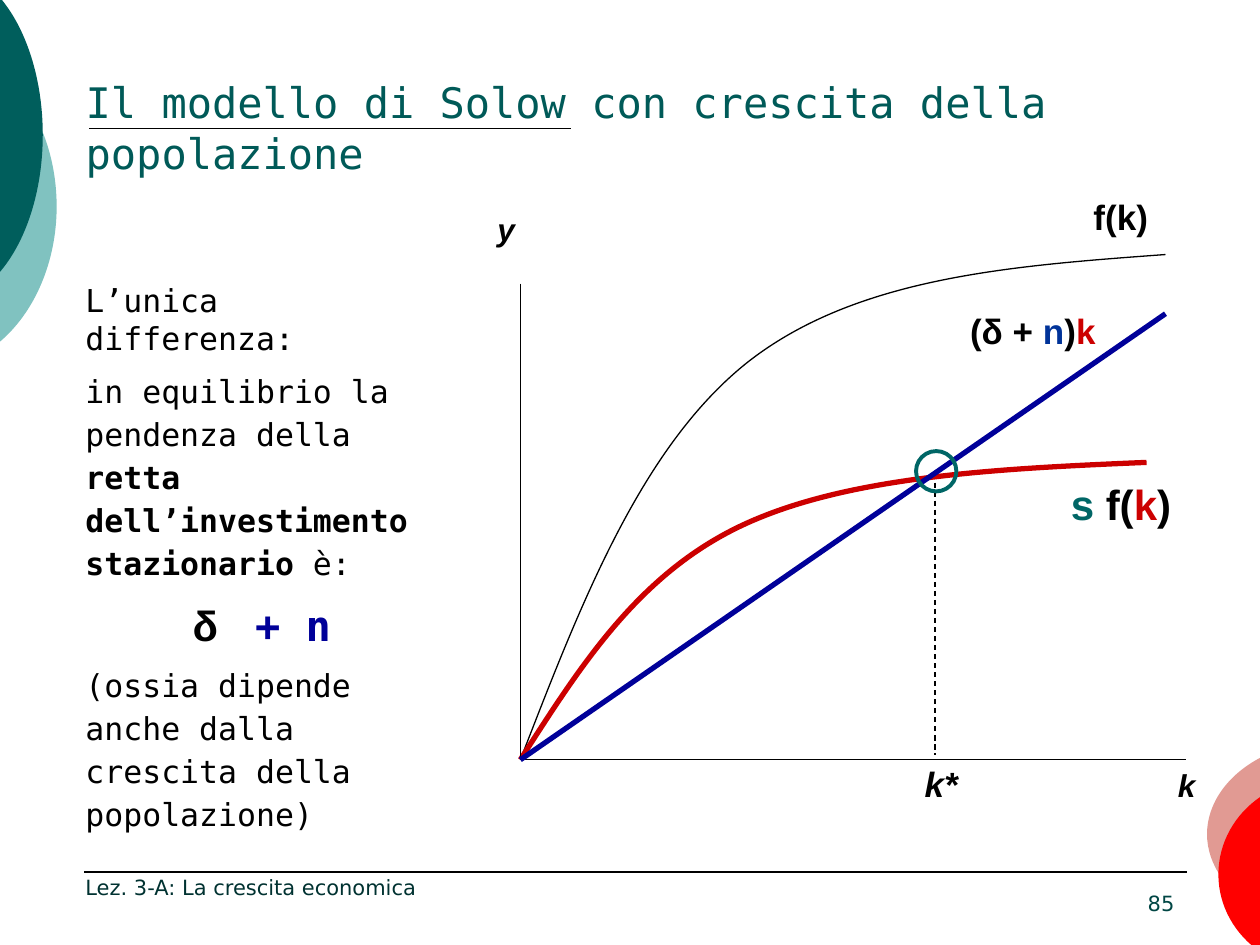
from dataclasses import dataclass

from lxml import etree
from pptx import Presentation
from pptx.dml.color import RGBColor
from pptx.enum.dml import MSO_LINE
from pptx.enum.shapes import MSO_CONNECTOR, MSO_SHAPE
from pptx.enum.text import MSO_ANCHOR, MSO_AUTO_SIZE, PP_ALIGN
from pptx.oxml.ns import qn
from pptx.util import Inches, Pt

STRAIGHT = MSO_CONNECTOR.STRAIGHT
RING = MSO_SHAPE.FLOWCHART_CONNECTOR
DASH = MSO_LINE.DASH
FIXED, GROW = MSO_AUTO_SIZE.NONE, MSO_AUTO_SIZE.SHAPE_TO_FIT_TEXT
TOP, BOTTOM = MSO_ANCHOR.TOP, MSO_ANCHOR.BOTTOM
LEFT, CENTER, RIGHT = PP_ALIGN.LEFT, PP_ALIGN.CENTER, PP_ALIGN.RIGHT


@dataclass(frozen=True)
class Theme:
    sans: str = "DejaVu Sans"
    mono: str = "DejaVu Sans Mono"
    math: str = "Arial"
    black: str = "000000"
    title: str = "005A58"
    foot: str = "003231"
    page: str = "004644"
    dark: str = "005E5C"
    light: str = "80C2C0"
    pink: str = "E19A93"
    bright: str = "FF0000"
    teal: str = "006666"
    red: str = "CC0000"
    navy: str = "000099"
    blue: str = "003399"
    small: int = 12
    body: int = 18
    label: int = 20
    large: int = 24
    thin: float = 0.75
    thick: float = 3


T = Theme()


def set_text(frame, paras, anchor=TOP, fit=FIXED):
    """Each para is (align, line spacing, space before, font, size, runs); a run is (text, colour, bold, italic)."""
    frame.word_wrap = True
    frame.auto_size = fit
    frame.vertical_anchor = anchor
    for i, (align, lead, gap, face, size, runs) in enumerate(paras):
        para = frame.paragraphs[0] if i == 0 else frame.add_paragraph()
        para.alignment, para.line_spacing, para.space_before = align, lead, Pt(gap)
        para.font.name, para.font.size = face, Pt(size)
        for text, color, bold, slant in runs:
            run = para.add_run()
            run.text = text
            run.font.color.rgb = RGBColor.from_string(color)
            run.font.bold, run.font.italic = bold, slant


def trace(points, closed):
    """Draw cubic curves: a start point, then three points for each piece."""
    dots = [(Inches(x), Inches(y)) for x, y in points]
    pen = shapes.build_freeform(*dots[0])
    pen.add_line_segments(dots[1:], close=closed)
    shape = pen.convert_to_shape()
    shape.shadow.inherit = False
    route = shape._element.spPr.find(".//" + qn("a:path"))
    steps = route.findall(qn("a:lnTo"))
    for n in range(0, len(steps), 3):
        bend = etree.Element(qn("a:cubicBezTo"))
        steps[n].addprevious(bend)
        for step in steps[n:n + 3]:
            bend.append(step[0])
            route.remove(step)
    return shape, route


prs = Presentation()
prs.slide_width, prs.slide_height = Inches(10), Inches(7.5)
slide = prs.slides.add_slide(prs.slide_layouts[5])
shapes = slide.shapes

# Title
title = shapes.title
title.left, title.top, title.width, title.height = map(Inches, (0.58, 0.56, 9, 1.02))
set_text(title.text_frame, [(LEFT, 1, 0, T.mono, T.large, [
    ("Il modello di Solow con crescita della popolazione", T.title, False, False)])])

# Edge discs, cut at the slide edge inside the frame of the full disc
discs = [
    ((-1.69, 0.31, 2.15, 2.65), T.light,
     [(-0.01, 0.55), (0.28, 0.8), (0.45, 1.2), (0.45, 1.64), (0.45, 2.07), (0.28, 2.48), (-0.01, 2.72)]),
    ((-1.27, -0.27, 1.61, 2.67), T.dark,
     [(-0.01, -0.03), (0.21, 0.22), (0.34, 0.63), (0.34, 1.07), (0.34, 1.51), (0.21, 1.92), (-0.01, 2.17)]),
    ((9.58, 5.88, 2.04, 1.48), T.pink,
     [(10.01, 7.23), (9.74, 7.09), (9.58, 6.86), (9.58, 6.62), (9.58, 6.38), (9.74, 6.15), (10.01, 6.01)]),
    ((9.67, 6.19, 1.53, 1.5), T.bright,
     [(10.01, 7.56), (9.8, 7.42), (9.67, 7.19), (9.67, 6.94), (9.67, 6.69), (9.8, 6.46), (10.01, 6.32)]),
]
for frame, color, points in discs:
    disc, route = trace(points, True)
    disc.fill.solid()
    disc.fill.fore_color.rgb = RGBColor.from_string(color)
    disc.line.fill.background()
    x, y, w, h = map(Inches, frame)
    for dot in route.iter(qn("a:pt")):
        dot.set("x", str(int(dot.get("x")) + disc.left - x))
        dot.set("y", str(int(dot.get("y")) + disc.top - y))
    route.set("w", str(w))
    route.set("h", str(h))
    disc.left, disc.top, disc.width, disc.height = x, y, w, h

# Output and saving curves
x0, y0 = 4.13, 6.03
curves = [
    (T.black, T.thin, [(x0, y0), (4.61, 4.79), (5.09, 3.54), (5.94, 2.87),
                       (6.8, 2.2), (8.02, 2.11), (9.25, 2.02)]),
    (T.red, T.thick, [(x0, y0), (4.6, 5.3), (5.06, 4.56), (5.89, 4.17),
                      (6.72, 3.78), (7.91, 3.72), (9.1, 3.67)]),
]
for color, width, points in curves:
    curve, route = trace(points, False)
    curve.fill.background()
    curve.line.color.rgb = RGBColor.from_string(color)
    curve.line.width = Pt(width)

# Rules, axes, drop line and investment line
lines = [
    (0.71, 1.02, 4.53, 1.02, T.black, 1, None),
    (0.67, 6.92, 9.42, 6.92, T.black, T.thin, None),
    (x0, 2.25, x0, y0, T.black, T.thin, None),
    (x0, y0, 9.41, y0, T.black, T.thin, None),
    (7.42, 3.83, 7.42, 5.99, T.black, T.thin, DASH),
    (x0, y0, 9.25, 2.49, T.navy, T.thick, None),
]
for ax, ay, bx, by, color, width, dash in lines:
    rule = shapes.add_connector(STRAIGHT, *map(Inches, (ax, ay, bx, by)))
    rule.line.color.rgb = RGBColor.from_string(color)
    rule.line.width = Pt(width)
    if dash:
        rule.line.dash_style = dash
    etree.SubElement(rule._element.spPr, qn("a:effectLst"))

# Equilibrium ring
ring = shapes.add_shape(RING, *map(Inches, (7.27, 3.58, 0.32, 0.32)))
ring.shadow.inherit = False
ring.fill.background()
ring.line.color.rgb = RGBColor.from_string(T.teal)
ring.line.width = Pt(2.25)

# Chart labels, the first one indented
labels = [
    (3.5, 1.62, 2.13, 0.4, 0.35, T.body, [("y", T.black, True, True)]),
    (9.25, y0, 0.63, 0.4, 0, T.body, [("k", T.black, True, True)]),
    (7.24, 6, 0.46, 0.43, 0, T.label, [("k*", T.black, True, True)]),
    (8.58, 1.5, 0.79, 0.44, 0, T.label, [("f(k)", T.black, True, False)]),
    (7.6, 2.41, 1.42, 0.43, 0, T.label, [
        ("(δ + ", T.black, True, False), ("n", T.blue, True, False),
        (")", T.black, True, False), ("k", T.red, True, False)]),
    (8.4, 3.75, 1.17, 0.5, 0, T.large, [
        ("s ", T.teal, True, False), ("f(", T.black, True, False),
        ("k", T.red, True, False), (")", T.black, True, False)]),
]
for x, y, w, h, indent, size, runs in labels:
    text = shapes.add_textbox(*map(Inches, (x, y, w, h))).text_frame
    set_text(text, [(LEFT, 1, 0, T.math, size, runs)], fit=GROW)
    text.word_wrap = w > 0.5
    if indent:
        text.paragraphs[0]._p.get_or_add_pPr().set("marL", str(Inches(indent)))

# Explanation
note = shapes.add_textbox(*map(Inches, (0.58, 2.18, 2.83, 3.55))).text_frame
set_text(note, [
    (LEFT, 1, 0, T.mono, T.body, [("L’unica differenza:", T.black, False, False)]),
    (LEFT, 1.14, 6, T.mono, T.body, [
        ("in equilibrio la pendenza della ", T.black, False, False),
        ("retta dell’investimento stazionario", T.black, True, False),
        (" è:", T.black, False, False)]),
    (CENTER, 1.14, 6, T.mono, T.large, [
        (" ", T.black, False, False), ("δ ", T.black, True, False), (" + n", T.navy, True, False)]),
    (LEFT, 1.14, 6, T.mono, T.body, [
        ("(ossia dipende anche dalla crescita della popolazione)", T.black, False, False)]),
], fit=GROW)
space, delta = note.paragraphs[2].runs[:2]
space.font.size = Pt(T.label)
delta.font.name = T.math

# Footer and page number
for x, y, w, h, align, text, color in [
    (0.58, 6.83, 4.34, 0.36, LEFT, "Lez. 3-A: La crescita economica", T.foot),
    (8.15, 6.82, 1.27, 0.5, RIGHT, "85", T.page),
]:
    box = shapes.add_textbox(*map(Inches, (x, y, w, h)))
    set_text(box.text_frame, [(align, 1, 0, T.sans, T.small,
                               [(text, color, False, False)])], BOTTOM)

prs.save("out.pptx")
